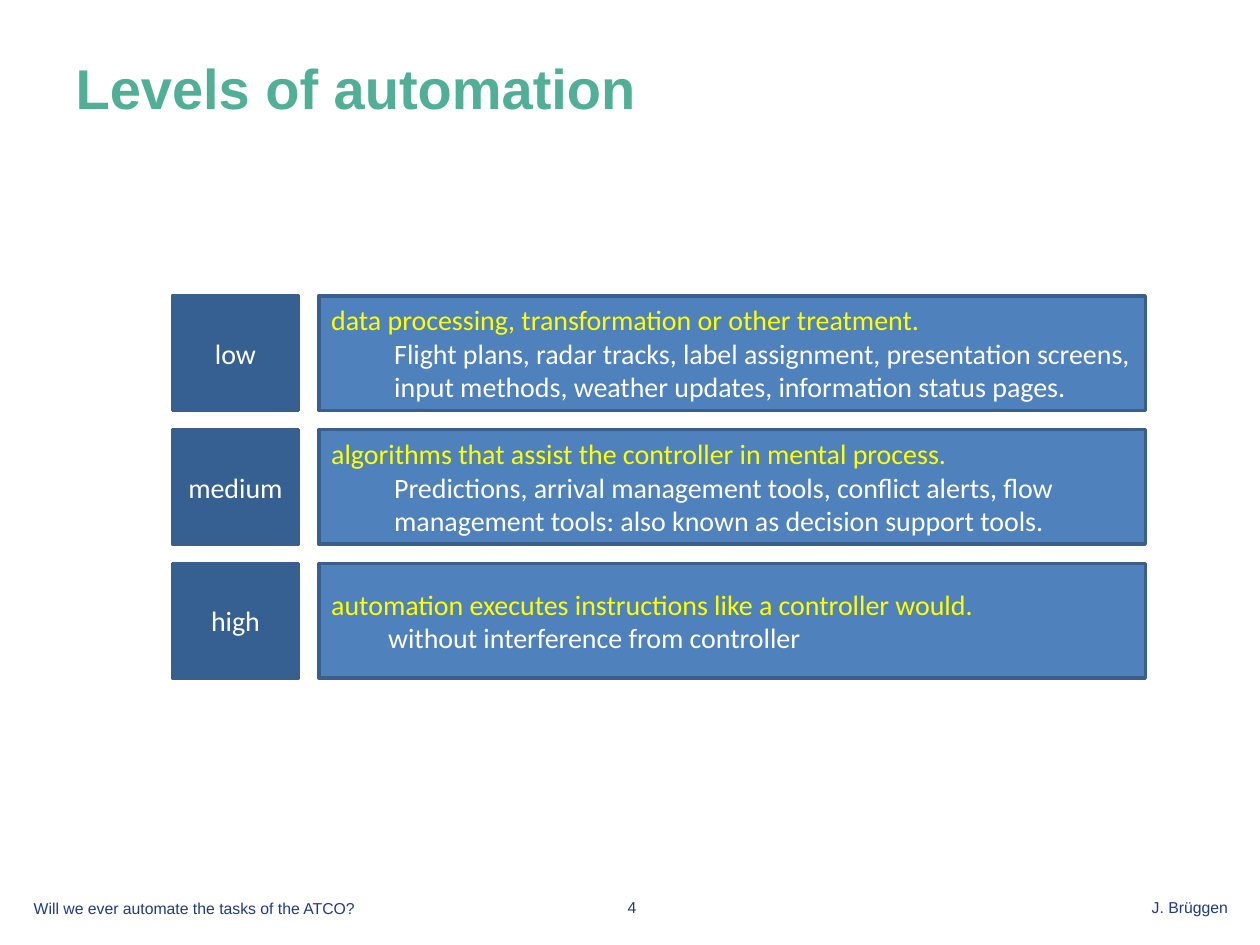
from pptx import Presentation
from pptx.dml.color import RGBColor
from pptx.enum.shapes import MSO_SHAPE
from pptx.enum.text import MSO_ANCHOR, PP_ALIGN
from pptx.util import Pt

GREEN = RGBColor(0x50, 0xAF, 0x96)
NAVY = RGBColor(0x1E, 0x3C, 0x82)
BLUE = RGBColor(0x4F, 0x81, 0xBD)
DARK_BLUE = RGBColor(0x37, 0x60, 0x92)
BORDER = RGBColor(0x3A, 0x5F, 0x8C)
YELLOW = RGBColor(0xFF, 0xFF, 0x00)
WHITE = RGBColor(0xFF, 0xFF, 0xFF)


def format_paragraph(p, text, size, name, color, align=PP_ALIGN.LEFT):
    p.text = text
    p.alignment = align
    p.font.size = Pt(size)
    p.font.name = name
    p.font.color.rgb = color


def add_box(left, top, width, height, fill):
    sp = s.shapes.add_shape(MSO_SHAPE.RECTANGLE, Pt(left), Pt(top), Pt(width), Pt(height))
    sp.shadow.inherit = False
    sp.fill.solid()
    sp.fill.fore_color.rgb = fill
    sp.line.color.rgb = BORDER
    sp.line.width = Pt(2)
    tf = sp.text_frame
    tf.word_wrap = True
    tf.vertical_anchor = MSO_ANCHOR.MIDDLE
    return tf


prs = Presentation()
prs.slide_width, prs.slide_height = Pt(720), Pt(540)
s = prs.slides.add_slide(prs.slide_layouts[5])

# Title
title = s.shapes.title
title.left, title.top, title.width, title.height = Pt(36), Pt(27), Pt(648), Pt(90)
title.text_frame.vertical_anchor = MSO_ANCHOR.TOP
p = title.text_frame.paragraphs[0]
format_paragraph(p, "Levels of automation", 32, "Arial", GREEN)
p.font.bold = True

# One row per level: label, heading, examples, indent of the examples
levels = [
    ("low", "data processing, transformation or other treatment.",
     "Flight plans, radar tracks, label assignment, presentation screens, "
     "input methods, weather updates, information status pages.", 36),
    ("medium", "algorithms that assist the controller in mental process.",
     "Predictions, arrival management tools, conflict alerts, flow "
     "management tools: also known as decision support tools.", 36),
    ("high", "automation executes instructions like a controller would.",
     "without interference from controller", 32.5),
]
TOP, PITCH, HEIGHT = 169, 76.5, 65.5
for i, (label, heading, examples, indent) in enumerate(levels):
    top = TOP + i * PITCH
    tf = add_box(182.2, top, 472.3, HEIGHT, BLUE)
    format_paragraph(tf.paragraphs[0], heading, 16, "Calibri", YELLOW)
    p = tf.add_paragraph()
    format_paragraph(p, examples, 16, "Calibri", WHITE)
    p._p.get_or_add_pPr().set("marL", str(Pt(indent)))

    tf = add_box(98.6, top, 72, HEIGHT, DARK_BLUE)
    format_paragraph(tf.paragraphs[0], label, 16, "Calibri", WHITE, PP_ALIGN.CENTER)

# Footer
footers = [
    ("Will we ever automate the tasks of the ATCO?", 12.2, 510, 266, PP_ALIGN.LEFT),
    ("4", 277.2, 509.4, 168, PP_ALIGN.CENTER),
    ("J. Brüggen", 540.7, 509.4, 168, PP_ALIGN.RIGHT),
]
for text, left, top, width, align in footers:
    tf = s.shapes.add_textbox(Pt(left), Pt(top), Pt(width), Pt(22)).text_frame
    tf.word_wrap = True
    format_paragraph(tf.paragraphs[0], text, 9, "Arial", NAVY, align)

prs.save("out.pptx")
